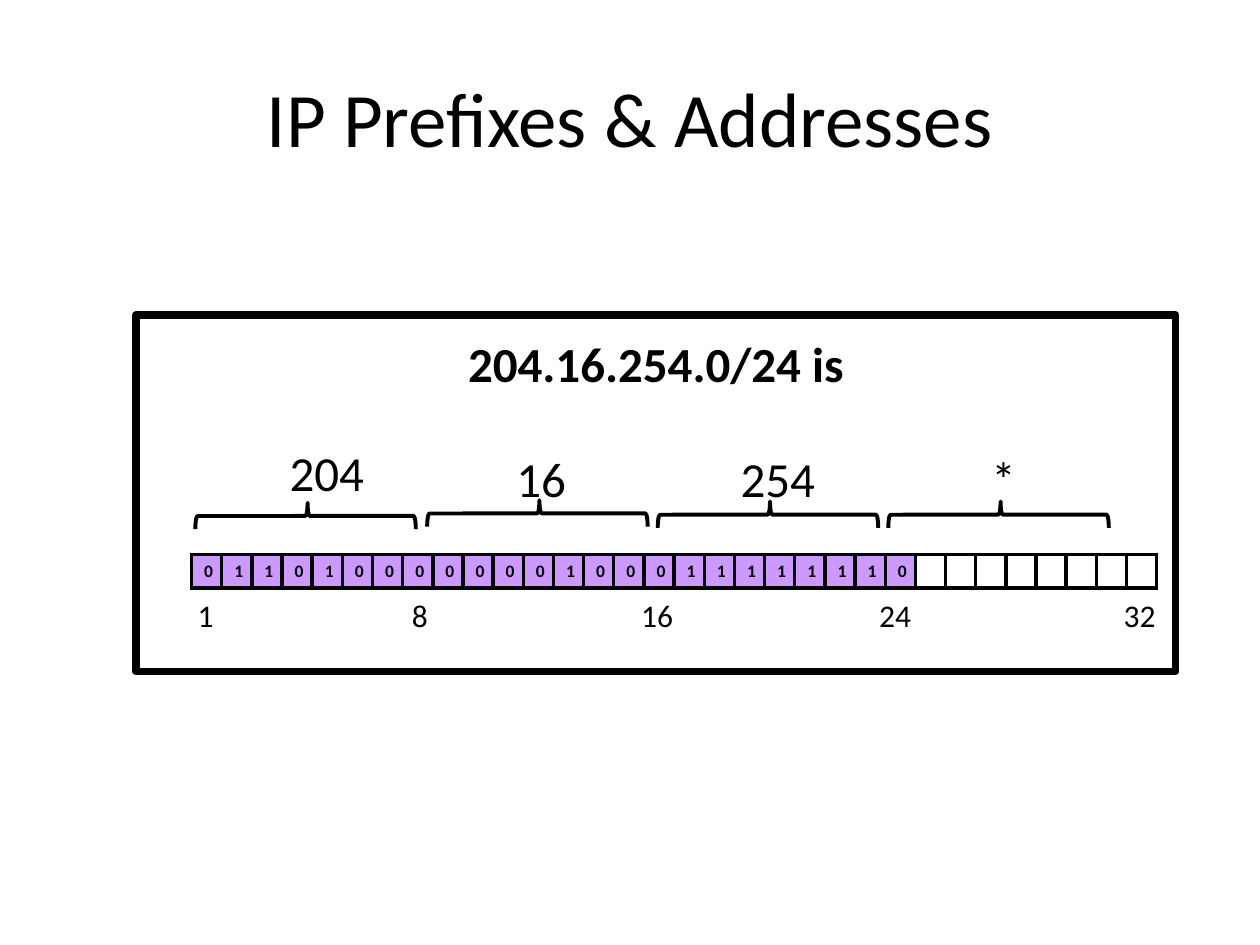
from lxml import etree
from pptx import Presentation
from pptx.dml.color import RGBColor
from pptx.enum.shapes import MSO_SHAPE as Shape
from pptx.enum.text import MSO_ANCHOR as Anchor, PP_ALIGN as Align
from pptx.oxml.ns import qn
from pptx.util import Inches, Pt

BLACK = RGBColor(0x00, 0x00, 0x00)
WHITE = RGBColor(0xFF, 0xFF, 0xFF)
PURPLE = RGBColor(0xCC, 0x99, 0xFF)

PREFIX_BITS = "110011000001000011111110".replace("110011", "011010", 1)
PREFIX_BITS = "011010000000100011111110"[:24]
ADDRESS_LENGTH = 32
# Octet label, label left, top and width, brace left and top
OCTETS = [
    ("204", 2.2, 3.46, 0.81, 2.32, 3.22),
    ("16", 4.0, 3.51, 0.6, 4.16, 3.2),
    ("254", 5.78, 3.51, 0.81, 5.99, 3.21),
    ("*", 7.77, 3.51, 0.4, 7.82, 3.21),
]
BIT_POSITIONS = ["1", "8", "16", "24", "32"]
POSITION_TABS = [1.7, 3.52, 5.41, 7.35]


def write_text(frame, text, size=28, bold=False, align=Align.LEFT, anchor=Anchor.TOP):
    frame.word_wrap = True
    frame.vertical_anchor = anchor
    paragraph = frame.paragraphs[0]
    paragraph.alignment = align
    if text:
        run = paragraph.add_run()
        run.text = text
        run.font.name = "Calibri"
        run.font.size = Pt(size)
        run.font.bold = bold
        run.font.color.rgb = BLACK
    else:
        # An empty line keeps the same height as a written one
        end = etree.SubElement(paragraph._p, qn("a:endParaRPr"))
        end.set("sz", str(size * 100))
    return paragraph


class SlideBuilder:
    border_width = Pt(2.25)

    def __init__(self, slide):
        self.slide = slide

    def label(self, text, left, top, width, height, **style):
        box = self.slide.shapes.add_textbox(
            Inches(left), Inches(top), Inches(width), Inches(height))
        return write_text(box.text_frame, text, **style)

    def outline(self, kind, left, top, width, height, line_width):
        shape = self.slide.shapes.add_shape(
            kind, Inches(left), Inches(top), Inches(width), Inches(height))
        shape.shadow.inherit = False
        shape.fill.solid()
        shape.fill.fore_color.rgb = WHITE
        shape.line.color.rgb = BLACK
        shape.line.width = line_width
        return shape

    def brace(self, left, top):
        brace = self.outline(Shape.LEFT_BRACE, left, top, 0.21, 1.75, self.border_width)
        brace.adjustments[0] = 0.083
        brace.adjustments[1] = 0.491
        brace.rotation = 90

    def tabbed_label(self, texts, stops, left, top, width, height, **style):
        paragraph = self.label("\t".join(texts), left, top, width, height, **style)
        tab_list = etree.SubElement(paragraph._p.get_or_add_pPr(), qn("a:tabLst"))
        for stop in stops:
            etree.SubElement(tab_list, qn("a:tab"), pos=str(Inches(stop)), algn="l")

    def cell_borders(self, cell):
        properties = cell._tc.get_or_add_tcPr()
        for index, side in enumerate(("lnL", "lnR", "lnT", "lnB")):
            line = etree.Element(qn(f"a:{side}"), w=str(self.border_width))
            fill = etree.SubElement(line, qn("a:solidFill"))
            etree.SubElement(fill, qn("a:srgbClr"), val=str(BLACK))
            properties.insert(index, line)

    def bit_table(self, bits, count, left, top, column_width, row_height):
        table = self.slide.shapes.add_table(
            1, count, Inches(left), Inches(top),
            Inches(column_width * count), Inches(row_height)).table
        table.first_row = table.horz_banding = False
        for column in table.columns:
            column.width = Inches(column_width)
        for index, bit in enumerate(bits.ljust(count)):
            cell = table.cell(0, index)
            cell.fill.solid()
            cell.fill.fore_color.rgb = PURPLE if index < len(bits) else WHITE
            write_text(cell.text_frame, bit.strip(), size=10, bold=True)
            self.cell_borders(cell)


def main():
    presentation = Presentation()
    presentation.slide_width = Inches(10)
    presentation.slide_height = Inches(7.5)
    builder = SlideBuilder(presentation.slides.add_slide(presentation.slide_layouts[6]))

    # Title
    builder.label("IP Prefixes & Addresses", 0.5, 0.3, 9, 1.25,
                  size=44, align=Align.CENTER, anchor=Anchor.MIDDLE)

    # Frame with the prefix
    frame = builder.outline(Shape.RECTANGLE, 1.08, 2.5, 8.25, 2.83, Pt(4.5))
    frame.text_frame.margin_top = Inches(0.15)
    write_text(frame.text_frame, "204.16.254.0/24 is", bold=True, align=Align.CENTER)

    # Octets with their braces
    for text, left, top, width, brace_left, brace_top in OCTETS:
        builder.brace(brace_left, brace_top)
        builder.label(text, left, top, width, 0.57)

    # Bits and their positions
    builder.tabbed_label(BIT_POSITIONS, POSITION_TABS, 1.47, 4.68, 8.2, 0.4, size=18)
    builder.bit_table(PREFIX_BITS, ADDRESS_LENGTH, 1.52, 4.4, 0.23, 0.25)

    presentation.save("out.pptx")


if __name__ == "__main__":
    main()
